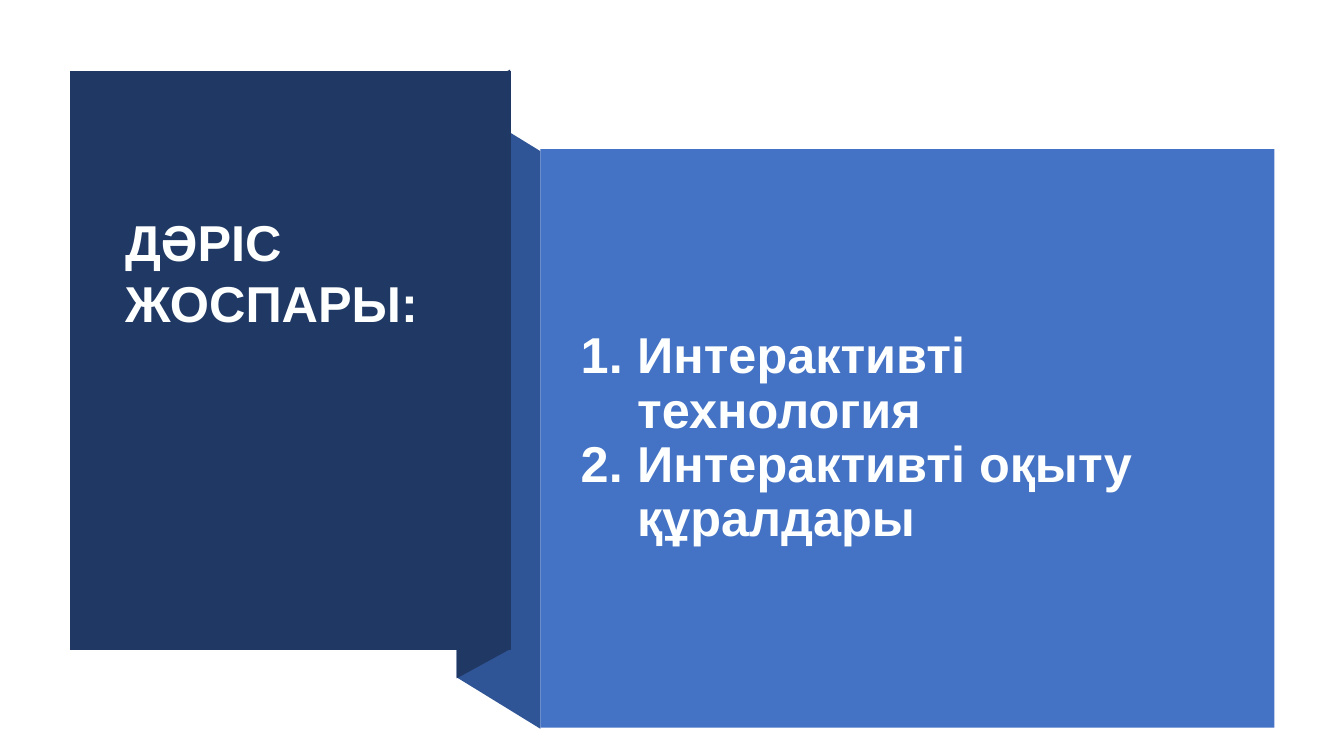
from lxml import etree
from pptx import Presentation
from pptx.dml.color import RGBColor
from pptx.enum.shapes import MSO_SHAPE
from pptx.enum.text import MSO_ANCHOR, MSO_AUTO_SIZE, PP_ALIGN
from pptx.oxml.ns import qn
from pptx.util import Inches, Pt

NAVY, FOLD_BLUE, BLUE, WHITE = "203864", "2F5597", "4472C4", "FEFFFF"


def paint(sp, color):
    sp.shadow.inherit = False
    sp.fill.solid()
    sp.fill.fore_color.rgb = RGBColor.from_string(color)
    sp.line.fill.background()


def write(sp, box, lines, line_spacing):
    """Place a placeholder above the panels and fill it with bold white lines."""
    sp.left, sp.top, sp.width, sp.height = [Inches(v) for v in box]
    sp.element.getparent().append(sp.element)
    tf = sp.text_frame
    frame_format = {"word_wrap": True, "auto_size": MSO_AUTO_SIZE.NONE,
                    "vertical_anchor": MSO_ANCHOR.MIDDLE}
    for name, value in frame_format.items():
        setattr(tf, name, value)
    tf.text = "\n".join(lines)
    para_format = {"alignment": PP_ALIGN.LEFT, "line_spacing": line_spacing,
                   "space_before": Pt(0)}
    font_format = {"name": "Arial", "size": Pt(36), "bold": True}
    for p in tf.paragraphs:
        for name, value in para_format.items():
            setattr(p, name, value)
        r = p.runs[0]
        for name, value in font_format.items():
            setattr(r.font, name, value)
        r.font.color.rgb = RGBColor.from_string(WHITE)


prs = Presentation()
prs.slide_width, prs.slide_height = Inches(13.33), Inches(7.5)
slide = prs.slides.add_slide(prs.slide_layouts[1])

# Folded ribbon behind the two panels, then the title panel
ribbon = [
    (FOLD_BLUE, [(5.36, 7.23), (4.53, 6.72), (4.53, 0.99), (5.36, 1.5)]),
    (NAVY, [(5.06, 6.44), (4.53, 6.73), (4.53, 0.98), (5.06, 0.69)]),
    (NAVY, [(0.69, 0.7), (5.07, 0.7), (5.07, 6.45), (0.69, 6.45)]),
]
for color, points in ribbon:
    corners = [(Inches(x), Inches(y)) for x, y in points]
    builder = slide.shapes.build_freeform(*corners[0])
    builder.add_line_segments(corners[1:], close=True)
    paint(builder.convert_to_shape(), color)

plan_panel = slide.shapes.add_shape(
    MSO_SHAPE.RECTANGLE, Inches(5.36), Inches(1.48), Inches(7.28), Inches(5.74))
paint(plan_panel, BLUE)

title, body = slide.shapes.title, slide.placeholders[1]
write(body, (5.66, 2.92, 6.5, 2.87),
      ["Интерактивті технология", "Интерактивті оқыту құралдары"], 0.9)
for p in body.text_frame.paragraphs:
    pPr = p._p.get_or_add_pPr()
    pPr.set("marL", str(Inches(0.56)))
    pPr.set("indent", str(-Inches(0.56)))
    font = etree.SubElement(pPr, qn("a:buFont"))
    font.set("typeface", "+mj-lt")
    etree.SubElement(pPr, qn("a:buAutoNum")).set("type", "arabicPeriod")

write(title, (1.14, 2.04, 4.04, 1.31), ["ДӘРІС ЖОСПАРЫ:"], 1.0)

prs.save("out.pptx")
